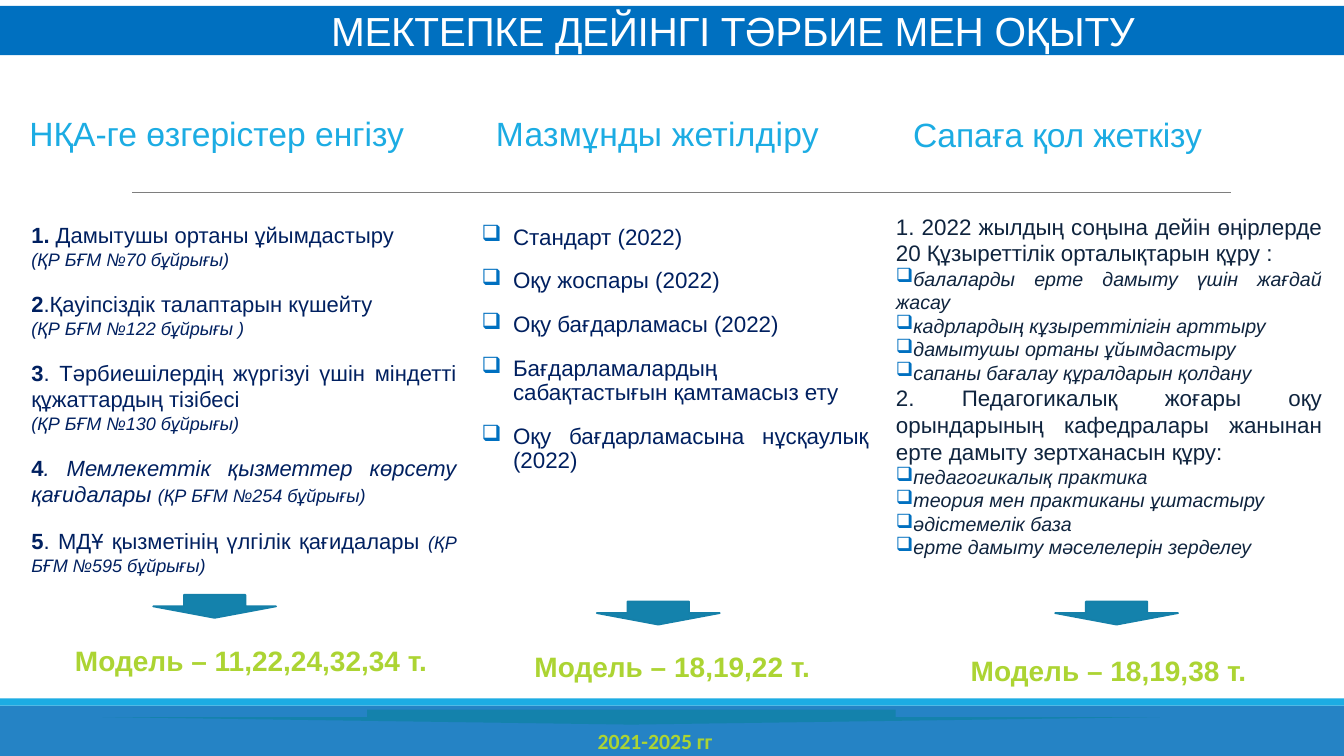
from dataclasses import dataclass

from lxml.etree import SubElement
from pptx import Presentation
from pptx.dml.color import RGBColor
from pptx.enum.shapes import MSO_CONNECTOR, MSO_SHAPE
from pptx.enum.text import MSO_ANCHOR, PP_ALIGN
from pptx.oxml.ns import qn
from pptx.util import Cm, Pt


@dataclass(frozen=True)
class Theme:
    """Colours, fonts and type sizes of the slide."""
    white: str = "FFFFFF"
    title_bar: str = "0070C0"
    heading: str = "1CACE3"
    footer: str = "2583C5"
    rule: str = "7E7E7E"
    arrow: str = "1482AC"
    arrow_edge: str = "1580A9"
    model: str = "ACD433"
    navy: str = "002060"
    ink: str = "0F243E"
    font: str = "Arial"
    footer_font: str = "Calibri"
    title_size: float = 29
    heading_size: float = 24
    model_size: float = 20
    body_size: float = 16
    detail_size: float = 14
    order_size: float = 15.7
    note_size: float = 12.9
    footer_size: float = 15.5


@dataclass(frozen=True)
class Box:
    """A rectangle in centimetres."""
    left: float
    top: float
    width: float
    height: float

    def inner(self, left, top, width, height):
        """Return a box placed relative to this one."""
        return Box(self.left + left, self.top + top, width, height)

    def lengths(self):
        """Return the position and size as slide lengths."""
        return [Cm(value) for value in (self.left, self.top, self.width, self.height)]


THEME = Theme()
PAGE = Box(0, 0, 33.87, 19.05)
ORDERS = [
    ("1.", " Дамытушы ортаны ұйымдастыру", "(ҚР БҒМ №70 бұйрығы)", True, False),
    ("2", ".Қауіпсіздік талаптарын күшейту", "(ҚР БҒМ №122 бұйрығы )", True, False),
    ("3", ". Тәрбиешілердің жүргізуі үшін міндетті құжаттардың тізібесі",
     "(ҚР БҒМ №130 бұйрығы)", True, False),
    ("4", ". Мемлекеттік қызметтер көрсету қағидалары ", "(ҚР БҒМ №254 бұйрығы)", False, True),
    ("5", ". МДҰ қызметінің үлгілік қағидалары ", "(ҚР БҒМ №595 бұйрығы)", False, False),
]
CONTENTS = [
    "Стандарт (2022)",
    "Оқу жоспары (2022)",
    "Оқу бағдарламасы (2022)",
    "Бағдарламалардың сабақтастығын қамтамасыз ету",
    "Оқу бағдарламасына нұсқаулық (2022)",
]
QUALITY = [
    ("1. 2022 жылдың соңына дейін өңірлерде 20 Құзыреттілік орталықтарын құру :",
     ["балаларды ерте дамыту үшін жағдай жасау", "кадрлардың кұзыреттілігін арттыру",
      "дамытушы ортаны ұйымдастыру", "сапаны бағалау құралдарын қолдану"]),
    ("2. Педагогикалық жоғары оқу орындарының кафедралары жанынан ерте дамыту зертханасын құру:",
     ["педагогикалық практика", "теория мен практиканы ұштастыру",
      "әдістемелік база", "ерте дамыту мәселелерін зерделеу"]),
]


def write(paragraph, text, size, color, font=THEME.font, bold=False, italic=False, spacing=0):
    """Add a formatted run to a paragraph."""
    run = paragraph.add_run()
    run.text = text
    run.font.name, run.font.size = font, Pt(size)
    run.font.bold, run.font.italic = bold, italic
    run.font.color.rgb = RGBColor.from_string(color)
    if spacing:
        run.font._element.set("spc", str(spacing))


def next_paragraph(frame, align=PP_ALIGN.JUSTIFY, before=0, after=0, line=1.0,
                   margin=0, hanging=0, bullet=False):
    """Return a fresh paragraph, using the empty first one when it is free."""
    first = frame.paragraphs[0]
    paragraph = frame.add_paragraph() if first.runs else first
    paragraph.alignment, paragraph.line_spacing = align, line
    paragraph.space_before, paragraph.space_after = Pt(before), Pt(after)
    properties = paragraph._p.get_or_add_pPr()
    properties.set("marL", str(Cm(margin)))
    properties.set("indent", str(-Cm(hanging)))
    if bullet:
        color = SubElement(properties, qn("a:buClr"))
        SubElement(color, qn("a:srgbClr"), val=THEME.title_bar)
        SubElement(properties, qn("a:buChar"), char="❑")
    return paragraph


def add_frame(slide, box, inset=(0, 0), anchor=MSO_ANCHOR.TOP):
    """Add a wrapping text box and return its text frame."""
    frame = slide.shapes.add_textbox(*box.lengths()).text_frame
    frame.word_wrap, frame.vertical_anchor = True, anchor
    frame.margin_left = frame.margin_right = Cm(inset[0])
    frame.margin_top = frame.margin_bottom = Cm(inset[1])
    return frame


def add_block(slide, box, fill, kind=MSO_SHAPE.RECTANGLE, edge=None):
    """Add a flat filled shape, outlined only when an edge colour is given."""
    shape = slide.shapes.add_shape(kind, *box.lengths())
    shape.shadow.inherit = False
    shape.fill.solid()
    shape.fill.fore_color.rgb = RGBColor.from_string(fill)
    if edge:
        shape.line.color.rgb = RGBColor.from_string(edge)
        shape.line.width = Pt(1.25)
    else:
        shape.line.fill.background()
    return shape


def draw_title(slide, box):
    """Draw the title bar and its caption."""
    add_block(slide, box, THEME.title_bar)
    paragraph = next_paragraph(add_frame(slide, box), PP_ALIGN.CENTER, margin=3.07)
    write(paragraph, "МЕКТЕПКЕ ДЕЙІНГІ ТӘРБИЕ МЕН ОҚЫТУ", THEME.title_size, THEME.white, spacing=-30)


def draw_rule(slide, box):
    """Draw the thin line along the top of its box."""
    left, top, width, _ = box.lengths()
    rule = slide.shapes.add_connector(MSO_CONNECTOR.STRAIGHT, left, top, left + width, top)
    rule.line.color.rgb = RGBColor.from_string(THEME.rule)
    rule.line.width = Pt(0.5)
    SubElement(rule._element.spPr, qn("a:effectLst"))


def draw_footer(slide, box):
    """Draw the footer bands, the wide arrow and the period."""
    add_block(slide, box.inner(0, 0.18, box.width, box.height - 0.18), THEME.footer)
    add_block(slide, box.inner(0, 0, box.width, 0.18), THEME.heading)
    add_block(slide, box.inner(2.59, 0.28, 26.64, 0.38), THEME.arrow, MSO_SHAPE.DOWN_ARROW)
    paragraph = next_paragraph(add_frame(slide, box.inner(15.06, 0.74, 3.3, 0.64)), PP_ALIGN.LEFT)
    write(paragraph, "2021-2025 гг", THEME.footer_size, THEME.model, THEME.footer_font, bold=True)


def draw_column(slide, box, heading, heading_left, spacing, arrow_left, arrow_top,
                model, model_align=PP_ALIGN.CENTER, model_margin=0):
    """Draw a column's heading, arrow and model line."""
    frame = add_frame(slide, box.inner(heading_left, 0, box.width - heading_left, 1.02))
    write(next_paragraph(frame, PP_ALIGN.LEFT), heading, THEME.heading_size, THEME.heading,
          spacing=spacing)
    add_block(slide, box.inner(arrow_left, arrow_top, 3.1, 0.58), THEME.arrow,
              MSO_SHAPE.DOWN_ARROW, THEME.arrow_edge)
    frame = add_frame(slide, box.inner(0, box.height - 1.6, box.width, 1.6),
                      (0.25, 0.13), MSO_ANCHOR.BOTTOM)
    paragraph = next_paragraph(frame, model_align, before=10, margin=model_margin)
    write(paragraph, model, THEME.model_size, THEME.model, bold=True)


def draw_orders(slide, box):
    """Draw the numbered changes with the orders behind them."""
    frame = add_frame(slide, box)
    for index, (number, text, note, separate, italic) in enumerate(ORDERS):
        paragraph = next_paragraph(frame, before=14.8 if index else 0)
        write(paragraph, number, THEME.order_size, THEME.navy, bold=True)
        write(paragraph, text, THEME.order_size, THEME.navy, italic=italic)
        if separate:
            paragraph = next_paragraph(frame)
        write(paragraph, note, THEME.note_size, THEME.navy, italic=True)


def draw_contents(slide, box):
    """Draw the bulleted list of contents."""
    frame = add_frame(slide, box, (0, 0.13))
    for text in CONTENTS:
        paragraph = next_paragraph(frame, before=12, after=2, line=0.9,
                                   margin=0.79, hanging=0.79, bullet=True)
        write(paragraph, text, THEME.body_size, THEME.navy)


def draw_quality(slide, box):
    """Draw the quality goals with their bulleted details."""
    frame = add_frame(slide, box)
    for goal, details in QUALITY:
        write(next_paragraph(frame), goal, THEME.body_size, THEME.ink)
        for detail in details:
            write(next_paragraph(frame, bullet=True), detail, THEME.detail_size, THEME.ink, italic=True)


def main():
    """Build the slide and save it."""
    presentation = Presentation()
    presentation.slide_width, presentation.slide_height = Cm(PAGE.width), Cm(PAGE.height)
    slide = presentation.slides.add_slide(presentation.slide_layouts[6])
    draw_footer(slide, PAGE.inner(0, 17.6, PAGE.width, 1.45))
    draw_rule(slide, PAGE.inner(3.33, 4.85, 27.69, 0))
    draw_title(slide, PAGE.inner(0, 0.15, PAGE.width, 1.24))
    orders = PAGE.inner(0.46, 2.84, 11.23, 14.36)
    contents = PAGE.inner(12.22, 2.84, 9.45, 14.51)
    quality = PAGE.inner(22.2, 2.87, 11.48, 14.58)
    draw_column(slide, orders, "НҚА-ге өзгерістер енгізу", 0.28, 0, 3.4, 12.15,
                "Модель – 11,22,24,32,34 т.", PP_ALIGN.LEFT, 1.18)
    draw_column(slide, contents, "Мазмұнды жетілдіру", 0.28, 20, 2.82, 12.32, "Модель – 18,19,22 т.")
    draw_column(slide, quality, "Сапаға қол жеткізу", 0.81, -10, 4.39, 12.29, "Модель – 18,19,38 т.")
    draw_orders(slide, orders.inner(0.33, 2.75, 10.72, 9.32))
    draw_contents(slide, contents.inner(-0.08, 2.72, 9.75, 9.17))
    draw_quality(slide, quality.inner(0.38, 2.49, 10.74, 9.7))
    presentation.save("out.pptx")


if __name__ == "__main__":
    main()
